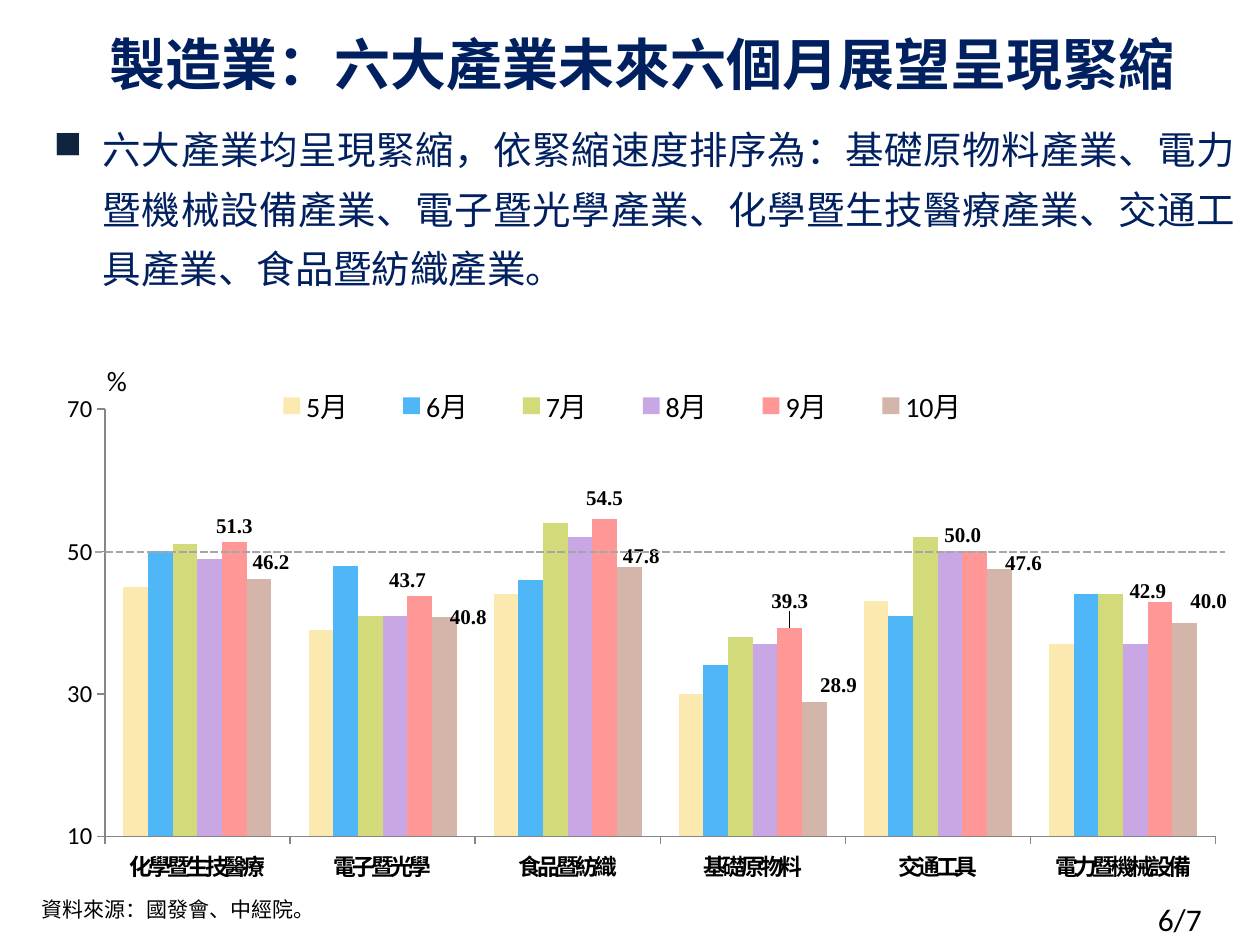
from lxml.etree import SubElement
from pptx import Presentation
from pptx.chart.data import CategoryChartData
from pptx.dml.color import RGBColor
from pptx.enum.chart import XL_CHART_TYPE, XL_LABEL_POSITION, XL_LEGEND_POSITION, XL_TICK_MARK
from pptx.enum.dml import MSO_LINE
from pptx.enum.shapes import MSO_CONNECTOR, MSO_SHAPE
from pptx.enum.text import MSO_ANCHOR, PP_ALIGN
from pptx.oxml import parse_xml
from pptx.oxml.ns import nsdecls, qn
from pptx.util import Inches, Pt

NAVY = RGBColor(0x00, 0x20, 0x60)
BLACK = RGBColor(0x00, 0x00, 0x00)
GRAY = RGBColor(0xA6, 0xA6, 0xA6)
AXIS_GRAY = RGBColor(0x86, 0x86, 0x86)
BULLET_COLOR = RGBColor(0x0F, 0x24, 0x3E)
CJK_FONT = "Noto Sans CJK SC"
LATIN_FONT = "Calibri"
LABEL_FONT = "Times New Roman"

INDUSTRIES = ["化學暨生技醫療", "電子暨光學", "食品暨紡織", "基礎原物料", "交通工具", "電力暨機械設備"]
MONTHS = [
    ("5月", RGBColor(0xFC, 0xE9, 0xAF), [45, 39, 44, 30, 43, 37]),
    ("6月", RGBColor(0x4F, 0xB7, 0xF7), [50, 48, 46, 34, 41, 44]),
    ("7月", RGBColor(0xD2, 0xDA, 0x7A), [51, 41, 54, 38, 52, 44]),
    ("8月", RGBColor(0xC9, 0xA6, 0xE4), [49, 41, 52, 37, 50, 37]),
    ("9月", RGBColor(0xFF, 0x97, 0x97), [51.3, 43.7, 54.5, 39.3, 50, 42.9]),
    ("10月", RGBColor(0xD4, 0xB5, 0xAA), [46.2, 40.8, 47.8, 28.9, 47.6, 40]),
]
# Label shifts per industry, as fractions of the chart's width and height
LABEL_SHIFTS = {
    "9月": [(0, 0), (-0.01, 0), (0, -0.01), (0, -0.02), (-0.01, 0), (-0.01, 0.01)],
    "10月": [(0.01, 0), (0.02, 0.03), (0.01, 0.01), (0.02, 0), (0.02, 0.02), (0.02, -0.01)],
}


def set_font(font, name, size, color=BLACK, bold=False):
    font.name, font.size, font.bold = name, Pt(size), bold
    font.color.rgb = color


def write_text(shape, text, name, size, color=BLACK, bold=False):
    """Fill the shape with one formatted paragraph and return it."""
    shape.text_frame.text = text
    shape.text_frame.word_wrap = True
    paragraph = shape.text_frame.paragraphs[0]
    run = paragraph.runs[0]
    set_font(run.font, name, size, color, bold)
    SubElement(run._r.get_or_add_rPr(), qn("a:ea")).set("typeface", name)
    return paragraph


def add_text(slide, box, text, name, size):
    return write_text(slide.shapes.add_textbox(*map(Inches, box)), text, name, size)


def set_hanging_indent(paragraph, margin, indent):
    properties = paragraph._p.get_or_add_pPr()
    properties.set("marL", str(Inches(margin)))
    properties.set("indent", str(Inches(indent)))
    return properties


def add_title(slide, text):
    title = slide.shapes.title
    title.left, title.top, title.width, title.height = map(Inches, (0.1, -0.01, 10, 1))
    paragraph = write_text(title, text, CJK_FONT, 32, NAVY, bold=True)
    title.text_frame.vertical_anchor = MSO_ANCHOR.MIDDLE
    paragraph.alignment = PP_ALIGN.CENTER
    paragraph.line_spacing = Pt(40)
    set_hanging_indent(paragraph, 0.79, -0.79)


def add_bullet_panel(slide, text):
    panel = slide.shapes.add_shape(
        MSO_SHAPE.ROUNDED_RECTANGLE, *map(Inches, (0.13, 0.8, 9.88, 2.01)))
    panel.shadow.inherit = False
    panel.fill.background()
    panel.line.fill.background()
    frame = panel.text_frame
    frame.vertical_anchor = MSO_ANCHOR.TOP
    frame.margin_top = frame.margin_bottom = 0
    paragraph = write_text(panel, text, CJK_FONT, 22, NAVY)
    paragraph.alignment = PP_ALIGN.JUSTIFY
    paragraph.line_spacing = Pt(34)
    properties = set_hanging_indent(paragraph, 0.49, -0.39)
    bullet_color = SubElement(properties, qn("a:buClr"))
    SubElement(bullet_color, qn("a:srgbClr")).set("val", str(BULLET_COLOR))
    SubElement(properties, qn("a:buChar")).set("char", "■")


def manual_layout(x, y, size=None, inner=False):
    parts = [("layoutTarget", "inner")] if inner else []
    if size:
        parts += [("xMode", "edge"), ("yMode", "edge")]
    parts += [("x", x), ("y", y)]
    if size:
        parts += zip("wh", size)
    content = "".join(f'<c:{tag} val="{value}"/>' for tag, value in parts)
    return parse_xml(
        f'<c:layout {nsdecls("c")}><c:manualLayout>{content}</c:manualLayout></c:layout>')


def replace_layout(parent, layout, position):
    for old in parent.findall(qn("c:layout")):
        parent.remove(old)
    parent.insert(position, layout)


def label_points(series, shifts):
    for index, shift in enumerate(shifts):
        label = series.points[index].data_label
        set_font(label.font, LABEL_FONT, 12, bold=True)
        label.position = XL_LABEL_POSITION.OUTSIDE_END
        element = label._dLbl
        number_format = parse_xml(
            f'<c:numFmt {nsdecls("c")} formatCode="0.0" sourceLinked="0"/>')
        element.insert(1, number_format)
        element.insert(1, manual_layout(*shift))


def format_axes(chart):
    value_axis, category_axis = chart.value_axis, chart.category_axis
    value_axis.minimum_scale, value_axis.maximum_scale = 10, 70
    value_axis.major_unit = 20
    value_axis.has_major_gridlines = False
    value_axis.tick_labels.number_format = "0"
    value_axis.tick_labels.number_format_is_linked = False
    for axis, name, size, bold in ((value_axis, LATIN_FONT, 14, False),
                                   (category_axis, CJK_FONT, 13, True)):
        axis.major_tick_mark = XL_TICK_MARK.OUTSIDE
        axis.format.line.color.rgb = AXIS_GRAY
        set_font(axis.tick_labels.font, name, size, bold=bold)
    category_axis.tick_labels.font._element.set("spc", "-200")


def add_outlook_chart(slide):
    data = CategoryChartData()
    data.categories = INDUSTRIES
    for name, _, values in MONTHS:
        data.add_series(name, values)
    chart = slide.shapes.add_chart(
        XL_CHART_TYPE.COLUMN_CLUSTERED, *map(Inches, (0.26, 2.79, 9.55, 4.31)), data).chart
    set_font(chart.font, "Cabin", 18)
    chart.has_title = False
    chart.has_legend = True
    chart.legend.position = XL_LEGEND_POSITION.TOP
    chart.legend.include_in_layout = False
    set_font(chart.legend.font, LATIN_FONT, 16)
    replace_layout(chart.legend._element, manual_layout(0.17, 0.06, (0.64, 0.08)), 1)
    replace_layout(chart._chartSpace.chart.plotArea,
                   manual_layout(0.06, 0.106, (0.923, 0.787), inner=True), 0)
    format_axes(chart)
    plot = chart.plots[0]
    plot.gap_width, plot.overlap = 150, 0
    plot.vary_by_categories = False
    for series, (name, color, _) in zip(plot.series, MONTHS):
        series.format.fill.solid()
        series.format.fill.fore_color.rgb = color
        label_points(series, LABEL_SHIFTS.get(name, []))


def add_threshold_line(slide):
    line = slide.shapes.add_connector(
        MSO_CONNECTOR.STRAIGHT, *map(Inches, (0.75, 4.38, 9.72, 4.38)))
    line.line.color.rgb = GRAY
    line.line.width = Pt(1.5)
    line.line.dash_style = MSO_LINE.SQUARE_DOT
    SubElement(line._element.spPr, qn("a:effectLst"))


def main():
    presentation = Presentation()
    presentation.slide_width, presentation.slide_height = Inches(10), Inches(7.5)
    slide = presentation.slides.add_slide(presentation.slide_layouts[5])
    add_text(slide, (9.09, 7.09, 0.91, 0.4), "6/7", LATIN_FONT, 18)
    add_outlook_chart(slide)
    add_threshold_line(slide)
    source = add_text(slide, (0.23, 7.1, 9.79, 0.27), "資料來源：國發會、中經院。",
                      "Noto Sans CJK JP", 12)
    source.line_spacing, source.space_before = Pt(12), Pt(2)
    set_hanging_indent(source, 0.3, -0.3)
    add_title(slide, "製造業：六大產業未來六個月展望呈現緊縮")
    add_bullet_panel(slide, "六大產業均呈現緊縮，依緊縮速度排序為：基礎原物料產業、電力暨機械設備產業、"
                     "電子暨光學產業、化學暨生技醫療產業、交通工具產業、食品暨紡織產業。")
    add_text(slide, (0.75, 2.84, 0.63, 0.37), "%", LATIN_FONT, 16)
    presentation.save("out.pptx")


if __name__ == "__main__":
    main()
